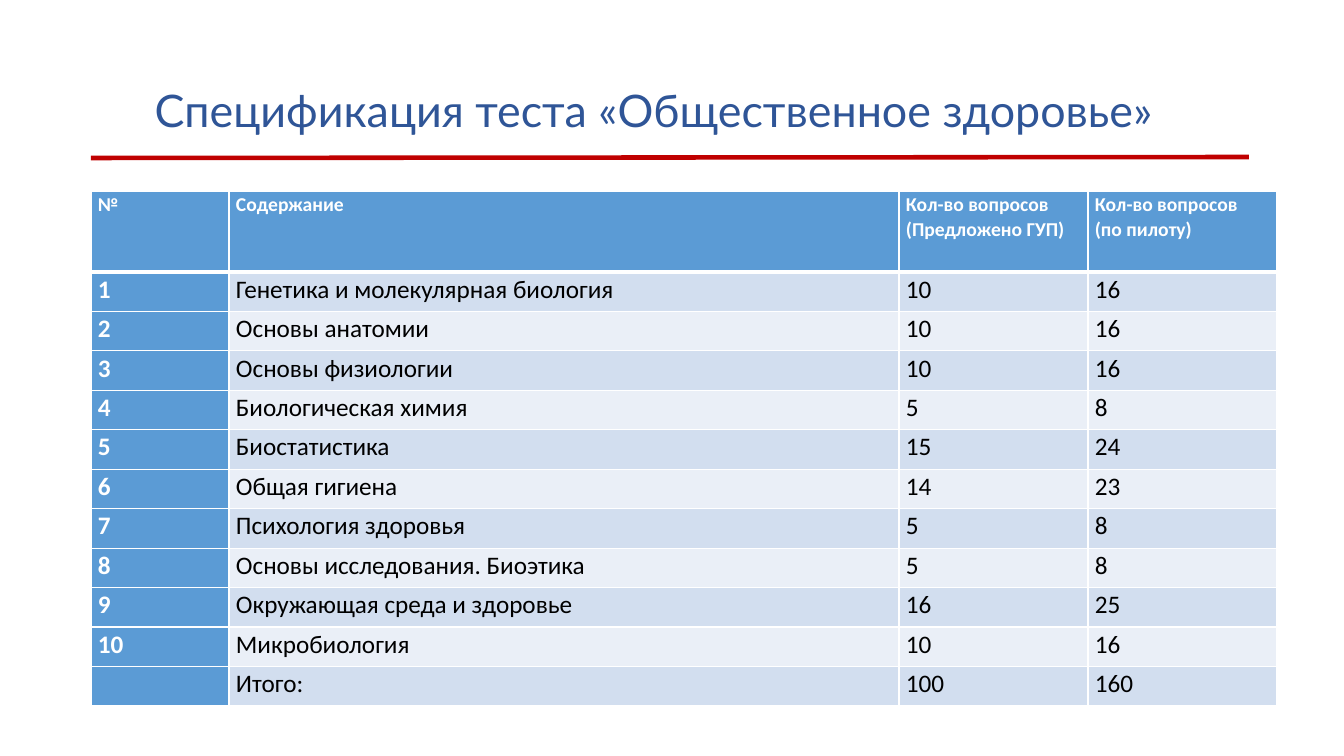
from dataclasses import dataclass

from lxml.etree import SubElement
from pptx import Presentation
from pptx.dml.color import RGBColor
from pptx.enum.shapes import MSO_CONNECTOR
from pptx.enum.text import MSO_ANCHOR, PP_ALIGN
from pptx.oxml.ns import qn
from pptx.util import Emu, Pt

HEADER = ["№", "Содержание", "Кол-во вопросов (Предложено ГУП)", "Кол-во вопросов\n(по пилоту)"]
TOPICS = [
    ("Генетика и молекулярная биология", 10, 16),
    ("Основы анатомии", 10, 16),
    ("Основы физиологии", 10, 16),
    ("Биологическая химия", 5, 8),
    ("Биостатистика", 15, 24),
    ("Общая гигиена", 14, 23),
    ("Психология здоровья", 5, 8),
    ("Основы исследования. Биоэтика", 5, 8),
    ("Окружающая среда и здоровье", 16, 25),
    ("Микробиология", 10, 16),
]


@dataclass(frozen=True)
class Theme:
    """Colours, fonts and type sizes of the slide."""
    title: str = "2F5597"
    rule: str = "C00000"
    accent: str = "5B9BD5"
    bands: tuple = ("D2DEEF", "EAEFF7")
    white: str = "FFFFFF"
    black: str = "000000"
    title_font: str = "Lato"
    body_font: str = "Calibri"
    title_size: int = 32
    header_size: int = 14
    body_size: int = 18


def px(n):
    """Convert pixels to EMU."""
    return Emu(round(n * 914400 / 100.8))


def write(tf, text, *, font, size, color, bold=False, align=PP_ALIGN.LEFT, spacing=1.07):
    """Fill a text frame, one paragraph per line."""
    tf.word_wrap = True
    for i, line in enumerate(text.split("\n")):
        p = tf.add_paragraph() if i else tf.paragraphs[0]
        p.alignment, p.line_spacing = align, spacing
        r = p.add_run()
        r.text = line
        r.font.name, r.font.size, r.font.bold = font, Pt(size), bold
        r.font.color.rgb = RGBColor.from_string(color)


class Deck:
    """Draws elements on the current slide in one style."""

    def __init__(self, theme):
        """Open a presentation with one blank slide."""
        self.theme = theme
        self.prs = Presentation()
        self.prs.slide_width, self.prs.slide_height = px(1344), px(756)
        self.s = self.prs.slides.add_slide(self.prs.slide_layouts[6])

    def title(self, text, x, y, w, h):
        """Add the centred heading."""
        t = self.theme
        tf = self.s.shapes.add_textbox(px(x), px(y), px(w), px(h)).text_frame
        tf.vertical_anchor = MSO_ANCHOR.MIDDLE
        write(tf, text, font=t.title_font, size=t.title_size, color=t.title,
              align=PP_ALIGN.CENTER, spacing=0.9)

    def rule(self, x1, y1, x2, y2, width):
        """Add a straight line without shadow."""
        sp = self.s.shapes.add_connector(MSO_CONNECTOR.STRAIGHT, px(x1), px(y1), px(x2), px(y2))
        sp.line.color.rgb = RGBColor.from_string(self.theme.rule)
        sp.line.width = Pt(width)
        SubElement(sp._element.spPr, qn("a:effectLst"))

    def cell(self, cell, text, fill, top, bottom, **fmt):
        """Style and fill one table cell."""
        tcPr = cell._tc.get_or_add_tcPr()
        for side, width in (("L", 1), ("R", 1), ("T", top), ("B", bottom)):
            ln = SubElement(tcPr, qn(f"a:ln{side}"), w=str(Pt(width)))
            SubElement(SubElement(ln, qn("a:solidFill")), qn("a:srgbClr"), val=self.theme.white)
        cell.fill.solid()
        cell.fill.fore_color.rgb = RGBColor.from_string(fill)
        cell.margin_left = cell.margin_right = px(7)
        cell.margin_top = cell.margin_bottom = 0
        write(cell.text_frame, text, font=self.theme.body_font, **fmt)

    def table(self, rows, x, y, widths, header_h, body_h):
        """Add a banded table with a header row and a header column."""
        t = self.theme
        tbl = self.s.shapes.add_table(len(rows), len(widths), px(x), px(y),
                                      px(sum(widths)), px(header_h + body_h)).table
        for column, w in zip(tbl.columns, widths):
            column.width = px(w)
        for i, values in enumerate(rows):
            tbl.rows[i].height = px(body_h / (len(rows) - 1)) if i else px(header_h)
            for j, value in enumerate(values):
                head = i == 0 or j == 0
                self.cell(tbl.cell(i, j), str(value),
                          fill=t.accent if head else t.bands[(i - 1) % 2],
                          top=3 if i == 1 else 1, bottom=1 if i else 3,
                          size=t.body_size if i else t.header_size,
                          color=t.white if head else t.black, bold=head)


def main():
    """Build and save the slide."""
    deck = Deck(Theme())
    deck.title("Спецификация теста «Общественное здоровье»", 58, 40, 1192, 146)
    body = [(n, *topic) for n, topic in enumerate(TOPICS, 1)]
    total = ("", "Итого:", sum(r[2] for r in body), sum(r[3] for r in body))
    deck.table([HEADER, *body, total], 91, 191, (138, 670, 189, 189), 81, 434)
    deck.rule(91, 158, 1249, 157, 3.25)
    deck.prs.save("out.pptx")


if __name__ == "__main__":
    main()
